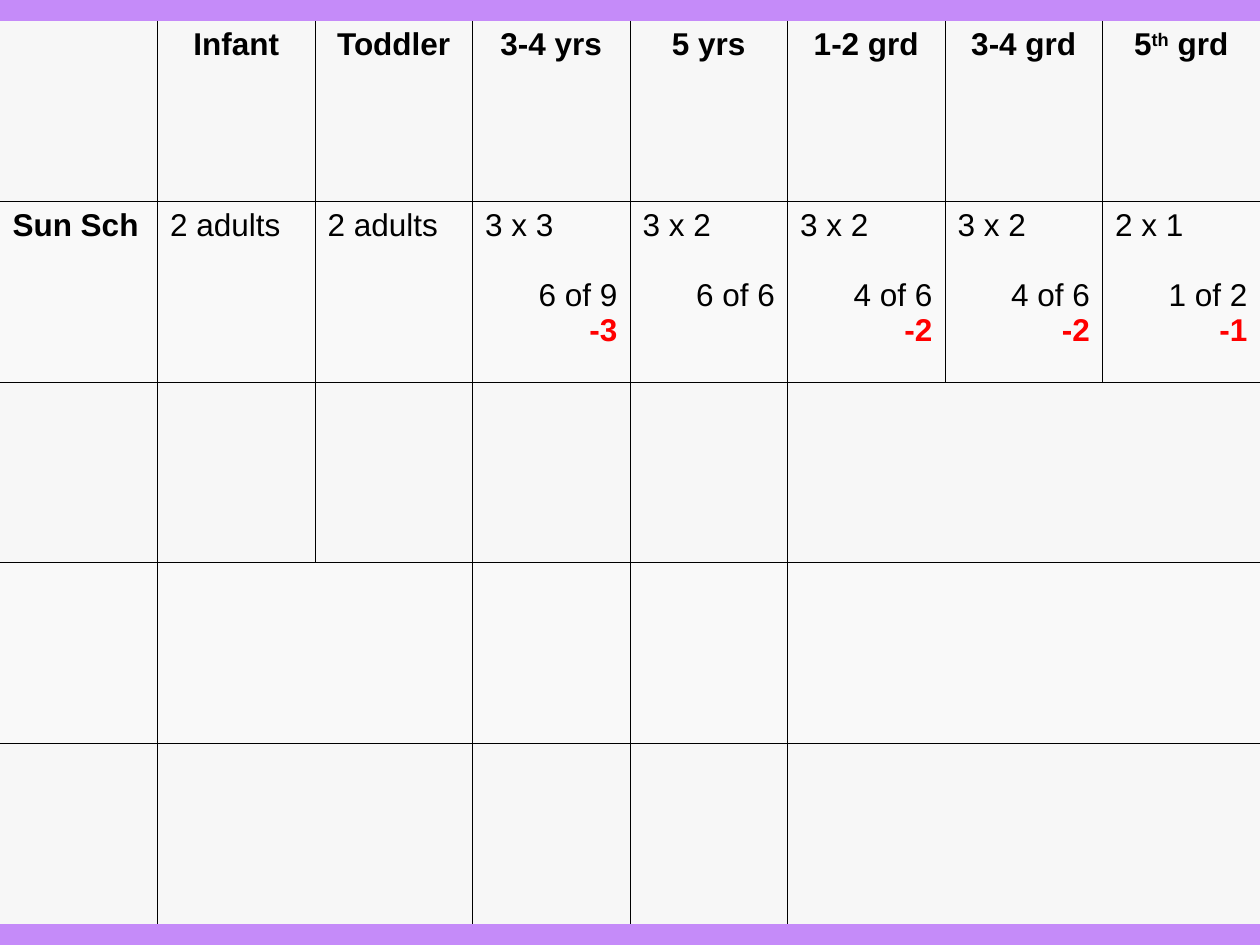
from dataclasses import dataclass

from lxml.etree import SubElement
from pptx import Presentation
from pptx.dml.color import RGBColor
from pptx.enum.text import PP_ALIGN
from pptx.oxml.ns import qn
from pptx.util import Cm, Pt


@dataclass(frozen=True)
class Theme:
    back: str = "C58BF9"
    plain: str = "F7F7F7"
    band: str = "F9F9F9"
    ink: str = "000000"
    short: str = "FF0000"
    font: str = "Arial"
    size: int = 18
    gap: int = 20
    line: float = 0.5


THEME = Theme()
WIDE, HIGH = Cm(25.4), Cm(19.05)
ROWS, COLS = 5, 8
HEADS = ["Infant", "Toddler", "3-4 yrs", "5 yrs", "1-2 grd", "3-4 grd", "5^th^ grd"]
# Need, places filled, shortfall
STAFF = [
    ("2 adults",), ("2 adults",),
    ("3 x 3", "6 of 9", "-3"), ("3 x 2", "6 of 6"),
    ("3 x 2", "4 of 6", "-2"), ("3 x 2", "4 of 6", "-2"),
    ("2 x 1", "1 of 2", "-1"),
]
# Row, first column, last column
SPANS = [(2, 5, 7), (3, 1, 2), (3, 5, 7), (4, 1, 2), (4, 5, 7)]


def paint(fill, color):
    fill.solid()
    fill.fore_color.rgb = RGBColor.from_string(color)


def edge(cell, side, shown):
    """Draw one side of a cell, or leave it open."""
    line = SubElement(cell._tc.get_or_add_tcPr(), qn(f"a:ln{side}"), w=str(Pt(THEME.line)))
    if shown:
        fill = SubElement(line, qn("a:solidFill"))
        SubElement(fill, qn("a:srgbClr"), val=THEME.ink)
    else:
        SubElement(line, qn("a:noFill"))


def style(cell, row, col):
    """Rule the inner grid lines only, and band the rows."""
    inner = {"L": col > 0, "R": col < COLS - 1, "T": row > 0, "B": row < ROWS - 1}
    for side, shown in inner.items():
        edge(cell, side, shown)
    paint(cell.fill, THEME.band if row % 2 else THEME.plain)


def write(para, text, align=PP_ALIGN.LEFT, bold=False, color=THEME.ink):
    """Fill a paragraph; text between carets is raised."""
    for i, part in enumerate(text.split("^")):
        run = para.add_run()
        run.text = part
        if i % 2:
            run._r.get_or_add_rPr().set("baseline", "30000")
    para.alignment = align
    font = para.font
    font.name, font.size, font.bold = THEME.font, Pt(THEME.size), bold
    font.color.rgb = RGBColor.from_string(color)


def staff(cell, need, filled=None, lack=None):
    frame = cell.text_frame
    write(frame.paragraphs[0], need)
    if filled:
        para = frame.add_paragraph()
        para.space_before = Pt(THEME.gap)
        write(para, filled, PP_ALIGN.RIGHT)
    if lack:
        write(frame.add_paragraph(), lack, PP_ALIGN.RIGHT, True, THEME.short)


def grid(slide):
    shape = slide.shapes.add_table(ROWS, COLS, 0, Cm(0.42), WIDE, Cm(18.2))
    table = shape.table
    table.first_row = table.horz_banding = False
    for row in range(ROWS):
        for col in range(COLS):
            style(table.cell(row, col), row, col)
    for row, first, last in SPANS:
        table.cell(row, first).merge(table.cell(row, last))
    return table


def main():
    deck = Presentation()
    deck.slide_width, deck.slide_height = WIDE, HIGH
    slide = deck.slides.add_slide(deck.slide_layouts[6])
    paint(slide.background.fill, THEME.back)

    # Age groups across the top, Sunday school staffing below
    table = grid(slide)
    write(table.cell(1, 0).text_frame.paragraphs[0], "Sun Sch", bold=True)
    for col, (head, need) in enumerate(zip(HEADS, STAFF), 1):
        write(table.cell(0, col).text_frame.paragraphs[0], head, PP_ALIGN.CENTER, True)
        staff(table.cell(1, col), *need)

    deck.save("out.pptx")


if __name__ == "__main__":
    main()
